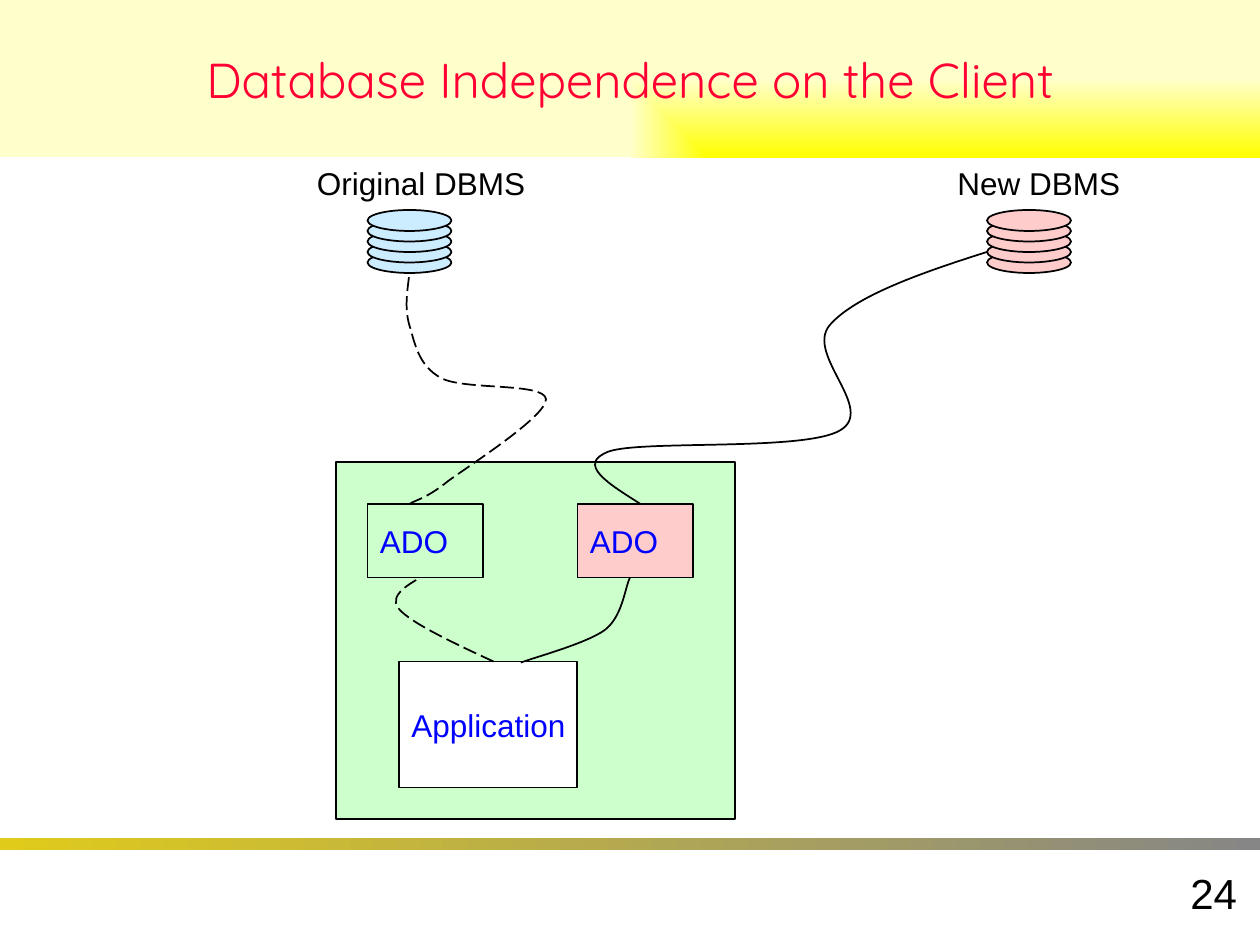
from lxml import etree
from pptx import Presentation, util as u
from pptx.dml.color import RGBColor
from pptx.enum import dml, shapes, text
from pptx.oxml import ns

SCALE = 7620

BLACK = RGBColor(0x00, 0x00, 0x00)
WHITE = RGBColor(0xFF, 0xFF, 0xFF)
BLUE = RGBColor(0x00, 0x00, 0xFF)
RED = RGBColor(0xFF, 0x00, 0x33)
YELLOW = RGBColor(0xFF, 0xFF, 0x00)
CREAM = RGBColor(0xFF, 0xFF, 0xCC)
GOLD = RGBColor(0xE0, 0xCB, 0x1B)
GRAY = RGBColor(0x86, 0x86, 0x86)
GREEN = RGBColor(0xCC, 0xFF, 0xCC)
PINK = RGBColor(0xFF, 0xCC, 0xCC)
SKY = RGBColor(0xCC, 0xEC, 0xFF)

OLD_APP_LINK = [(470, 630), (431, 612), (391, 593), (380, 580),
                (368, 566), (395, 554), (400, 550)]
OLD_DBMS_LINK = [(390, 480), (396, 476), (406, 475), (427, 458),
                 (449, 442), (521, 396), (520, 380),
                 (518, 364), (442, 372), (420, 360),
                 (398, 348), (395, 326), (390, 310),
                 (385, 293), (388, 277), (390, 260)]
NEW_APP_LINK = [(496, 631), (509, 626), (558, 613), (576, 600),
                (593, 587), (595, 560), (600, 550)]
NEW_DBMS_LINK = [(610, 480), (580, 461), (548, 442), (580, 430),
                 (612, 419), (766, 430), (800, 410),
                 (835, 390), (767, 338), (790, 310),
                 (814, 282), (877, 260), (940, 240)]


def px(*lengths):
    return [u.Emu(length * SCALE) for length in lengths]


def write(box, words, size=18, font="Arial", color=BLACK,
          align=text.PP_ALIGN.LEFT, anchor=text.MSO_ANCHOR.MIDDLE, wrap=False):
    frame = box.text_frame
    frame.word_wrap = wrap
    frame.vertical_anchor = anchor
    para = frame.paragraphs[0]
    para.alignment = align
    span = para.add_run()
    span.text = words
    span.font.size = u.Pt(size)
    span.font.name = font
    span.font.color.rgb = color


def add_box(page, place, fill=None, line=BLACK, kind=shapes.MSO_SHAPE.RECTANGLE):
    box = page.shapes.add_shape(kind, *px(*place))
    box.shadow.inherit = False
    if fill is None:
        box.fill.background()
    else:
        box.fill.solid()
        box.fill.fore_color.rgb = fill
    if line is None:
        box.line.fill.background()
    else:
        box.line.color.rgb = line
        box.line.width = u.Pt(1)
    return box


def add_gradient_band(page, place, first, last, from_corner=False):
    band = add_box(page, place, line=None)
    band.fill.gradient()
    band.fill.gradient_angle = 0
    for stop, color in zip(band.fill.gradient_stops, (first, last)):
        stop.color.rgb = color
    if from_corner:
        linear = band._element.spPr.find(".//" + ns.qn("a:lin"))
        route = etree.Element(ns.qn("a:path"), {"path": "rect"})
        etree.SubElement(route, ns.qn("a:fillToRect"),
                         {"l": "100000", "t": "100000"})
        linear.getparent().replace(linear, route)
    return band


def add_label(page, words, place):
    box = page.shapes.add_textbox(*px(*place))
    write(box, words, anchor=text.MSO_ANCHOR.TOP)
    box.text_frame.auto_size = text.MSO_AUTO_SIZE.SHAPE_TO_FIT_TEXT


def add_database(page, left, fill):
    for top in range(240, 199, -10):
        add_box(page, (left, top, 80, 20), fill, kind=shapes.MSO_SHAPE.OVAL)


def add_component(page, words, place, fill=None):
    write(add_box(page, place, fill), words, color=BLUE)


def add_curve(page, points, dashed=False):
    builder = page.shapes.build_freeform(*points[0], scale=SCALE)
    builder.add_line_segments(points[1:], close=False)
    curve = builder.convert_to_shape()
    curve.shadow.inherit = False
    curve.fill.background()
    curve.line.color.rgb = BLACK
    curve.line.width = u.Pt(1)
    if dashed:
        curve.line.dash_style = dml.MSO_LINE.LONG_DASH
    steps = list(curve._element.iter(ns.qn("a:lnTo")))
    for start in range(0, len(steps), 3):
        bezier = etree.Element(ns.qn("a:cubicBezTo"))
        steps[start].addprevious(bezier)
        for step in steps[start:start + 3]:
            bezier.append(step[0])
            step.getparent().remove(step)


def main():
    deck = Presentation()
    deck.slide_width, deck.slide_height = px(1200, 900)
    page = deck.slides.add_slide(deck.slide_layouts[6])

    add_gradient_band(page, (0, 798, 1200, 12), GOLD, GRAY)
    title = add_gradient_band(page, (0, 0, 1200, 150), YELLOW, CREAM,
                              from_corner=True)
    write(title, "Database Independence on the Client", size=28,
          font="Quicksand", color=RED, align=text.PP_ALIGN.CENTER, wrap=True)
    number = page.shapes.add_textbox(*px(940, 820, 250, 60))
    write(number, "24", size=24, align=text.PP_ALIGN.RIGHT)

    add_box(page, (320, 440, 380, 340), GREEN)
    add_database(page, 940, PINK)
    add_label(page, "New DBMS", (900, 150, 179, 48))
    add_database(page, 350, SKY)
    add_label(page, "Original DBMS", (290, 150, 222, 48))

    add_component(page, "Application", (380, 630, 170, 120), WHITE)
    add_component(page, "ADO", (350, 480, 110, 70))
    add_component(page, "ADO", (550, 480, 110, 70), PINK)

    add_curve(page, OLD_APP_LINK, dashed=True)
    add_curve(page, OLD_DBMS_LINK, dashed=True)
    add_curve(page, NEW_APP_LINK)
    add_curve(page, NEW_DBMS_LINK)
    deck.save("out.pptx")


if __name__ == "__main__":
    main()
